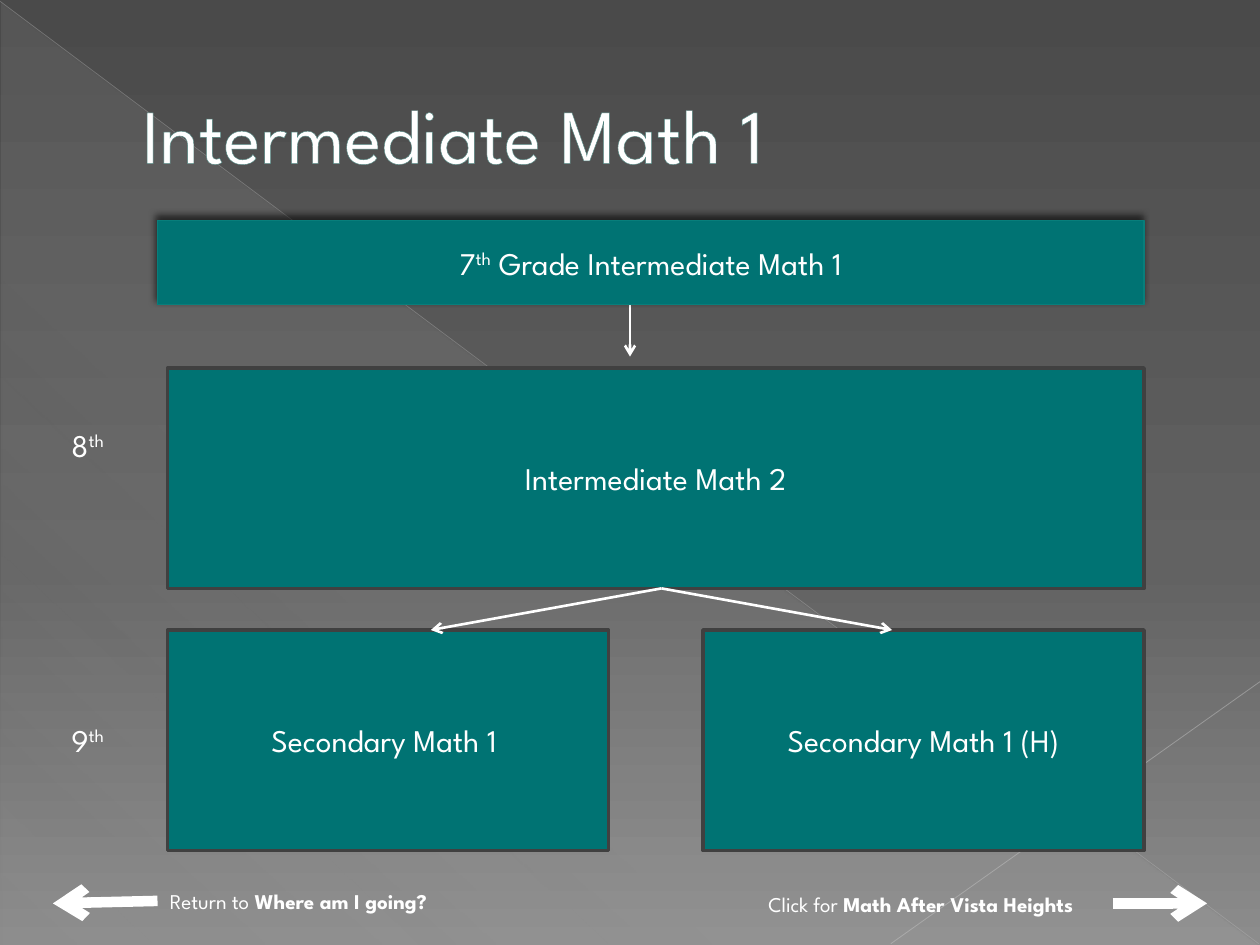
from lxml.etree import SubElement
from pptx import Presentation
from pptx.dml.color import RGBColor
from pptx.enum.shapes import MSO_CONNECTOR, MSO_SHAPE
from pptx.enum.text import MSO_ANCHOR, MSO_AUTO_SIZE, PP_ALIGN
from pptx.oxml import parse_xml
from pptx.oxml.ns import nsdecls, qn
from pptx.util import Inches, Pt

FONT = "League Spartan"
COLORS = {
    "white": "FFFFFF",
    "teal": "007373",
    "teal_edge": "087E7B",
    "box_edge": "404040",
    "title_edge": "528681",
    "background_top": "4A4A4A",
    "background_middle": "626262",
    "background_bottom": "8C8C8C",
    "sheen": "D2D2D2",
    "long_ray": "BFBFBF",
    "short_ray": "C6C6C6",
    "shadow": "000000",
}


def rgb(name):
    return RGBColor.from_string(COLORS[name])


def color_xml(name, opacity=100):
    return (f'<a:srgbClr val="{COLORS[name]}">'
            f'<a:alpha val="{opacity * 1000}"/></a:srgbClr>')


def set_gradient(fill, parent, stops, angle):
    """Fill with (position, color, opacity) stops; angle runs clockwise."""
    fill.gradient()
    stops_xml = "".join(
        f'<a:gs pos="{position * 1000}">{color_xml(color, opacity)}</a:gs>'
        for position, color, opacity in stops)
    gradient = parent.find(".//" + qn("a:gradFill"))
    gradient.getparent().replace(gradient, parse_xml(
        f'<a:gradFill {nsdecls("a")} rotWithShape="1"><a:gsLst>{stops_xml}</a:gsLst>'
        f'<a:lin ang="{angle * 60000}" scaled="0"/></a:gradFill>'))


class SlideBuilder:
    def __init__(self, slide):
        self.slide = slide

    def background(self, stops, angle):
        set_gradient(self.slide.background.fill, self.slide.element, stops, angle)

    def sheen(self, left, top, width, height, stops, angle):
        shape = self.slide.shapes.add_shape(
            MSO_SHAPE.RIGHT_TRIANGLE, Inches(left), Inches(top), Inches(width), Inches(height))
        shape.shadow.inherit = False
        shape.line.fill.background()
        set_gradient(shape.fill, shape.element.spPr, stops, angle)

    def line(self, start, end, width, color="white", opacity=100, arrow=False):
        connector = self.slide.shapes.add_connector(
            MSO_CONNECTOR.STRAIGHT, *(Inches(value) for value in (*start, *end)))
        connector.line.width = Pt(width)
        connector.line.color.rgb = rgb(color)
        properties = connector.element.spPr
        outline = properties.find(qn("a:ln"))
        if opacity < 100:
            SubElement(outline.find(".//" + qn("a:srgbClr")), qn("a:alpha"),
                       val=str(opacity * 1000))
        if arrow:
            SubElement(outline, qn("a:tailEnd"), type="arrow")
        SubElement(properties, qn("a:effectLst"))

    def add_runs(self, paragraph, runs, size):
        """Add (text, style) runs; style is "", "bold" or "superscript"."""
        for text, style in runs:
            run = paragraph.add_run()
            run.text = text
            run.font.name = FONT
            run.font.size = Pt(size)
            run.font.color.rgb = rgb("white")
            if style == "bold":
                run.font.bold = True
            elif style == "superscript":
                run.font._element.set("baseline", "30000")

    def text(self, left, top, width, height, runs, size, align=PP_ALIGN.LEFT):
        shape = self.slide.shapes.add_textbox(
            Inches(left), Inches(top), Inches(width), Inches(height))
        frame = shape.text_frame
        frame.word_wrap = True
        frame.auto_size = MSO_AUTO_SIZE.SHAPE_TO_FIT_TEXT
        frame.paragraphs[0].alignment = align
        self.add_runs(frame.paragraphs[0], runs, size)
        return shape

    def title(self, left, top, width, height, text):
        shape = self.text(left, top, width, height, [(text, "")], 44)
        frame = shape.text_frame
        frame.auto_size = MSO_AUTO_SIZE.NONE
        frame.vertical_anchor = MSO_ANCHOR.MIDDLE
        paragraph = frame.paragraphs[0]
        paragraph._p.get_or_add_pPr().set("marL", str(Inches(0.53)))
        paragraph.runs[0].font._element.insert(0, parse_xml(
            f'<a:ln {nsdecls("a")} w="{Pt(0.5)}"><a:solidFill>'
            f'{color_xml("title_edge")}</a:solidFill></a:ln>'))

    def box(self, left, top, width, height, runs, edge="box_edge", edge_width=2):
        shape = self.slide.shapes.add_shape(
            MSO_SHAPE.RECTANGLE, Inches(left), Inches(top), Inches(width), Inches(height))
        shape.shadow.inherit = False
        shape.fill.solid()
        shape.fill.fore_color.rgb = rgb("teal")
        shape.line.color.rgb = rgb(edge)
        shape.line.width = Pt(edge_width)
        frame = shape.text_frame
        frame.word_wrap = True
        frame.vertical_anchor = MSO_ANCHOR.MIDDLE
        frame.paragraphs[0].alignment = PP_ALIGN.CENTER
        self.add_runs(frame.paragraphs[0], runs, 18)
        return shape

    def cast_shadow(self, shape, opacity, blur, distance, angle):
        effects = shape.element.spPr.find(qn("a:effectLst"))
        effects.append(parse_xml(
            f'<a:outerShdw {nsdecls("a")} blurRad="{Pt(blur)}" dist="{Pt(distance)}" '
            f'dir="{angle * 60000}" rotWithShape="0">'
            f'{color_xml("shadow", opacity)}</a:outerShdw>'))


def main():
    presentation = Presentation()
    presentation.slide_width = Inches(10)
    presentation.slide_height = Inches(7.5)
    builder = SlideBuilder(presentation.slides.add_slide(presentation.slide_layouts[6]))

    builder.background([(0, "background_top", 100), (60, "background_middle", 100),
                        (100, "background_bottom", 100)], 90)
    builder.sheen(0.01, 0.02, 9.98, 7.48,
                  [(0, "sheen", 10), (70, "sheen", 8), (100, "sheen", 1)], 133)
    builder.line((0, 0.01), (9.99, 7.49), 0.39, "long_ray", 35)
    builder.line((10, 5.41), (7.07, 7.49), 0.47, "short_ray", 45)
    builder.title(0.5, 0.29, 9, 1.53, "Intermediate Math 1")

    for grade, top in (("8", 3.33), ("9", 5.67)):
        builder.text(0.33, top, 0.67, 0.4, [(f" {grade}", ""), ("th", "superscript")],
                     18, PP_ALIGN.CENTER)

    for left, course in ((5.58, "Secondary Math 1 (H)"), (1.33, "Secondary Math 1 ")):
        builder.box(left, 5, 3.5, 1.75, [(course, "")])
    builder.line((5, 2.42), (5, 2.83), 1.5, arrow=True)
    builder.box(1.33, 2.92, 7.75, 1.75, [("Intermediate Math 2", "")])
    grade_seven = builder.box(
        1.25, 1.75, 7.83, 0.67,
        [("7", ""), ("th", "superscript"), (" Grade Intermediate Math 1", "")],
        "teal_edge", 0.75)
    builder.cast_shadow(grade_seven, opacity=60, blur=4, distance=3, angle=245)
    for end_x in (3.42, 7.08):
        builder.line((5.25, 4.67), (end_x, 5), 1.5, arrow=True)

    builder.line((1.25, 7.15), (0.42, 7.17), 6, arrow=True)
    builder.text(1.25, 7, 2.92, 0.3,
                 [("Return to ", ""), ("Where am I going?", "bold")], 12)
    builder.line((8.83, 7.17), (9.58, 7.17), 6, arrow=True)
    builder.text(6, 7.03, 3.08, 0.3,
                 [("Click for ", ""), ("Math After Vista Heights", "bold")], 12)

    presentation.save("out.pptx")


if __name__ == "__main__":
    main()
